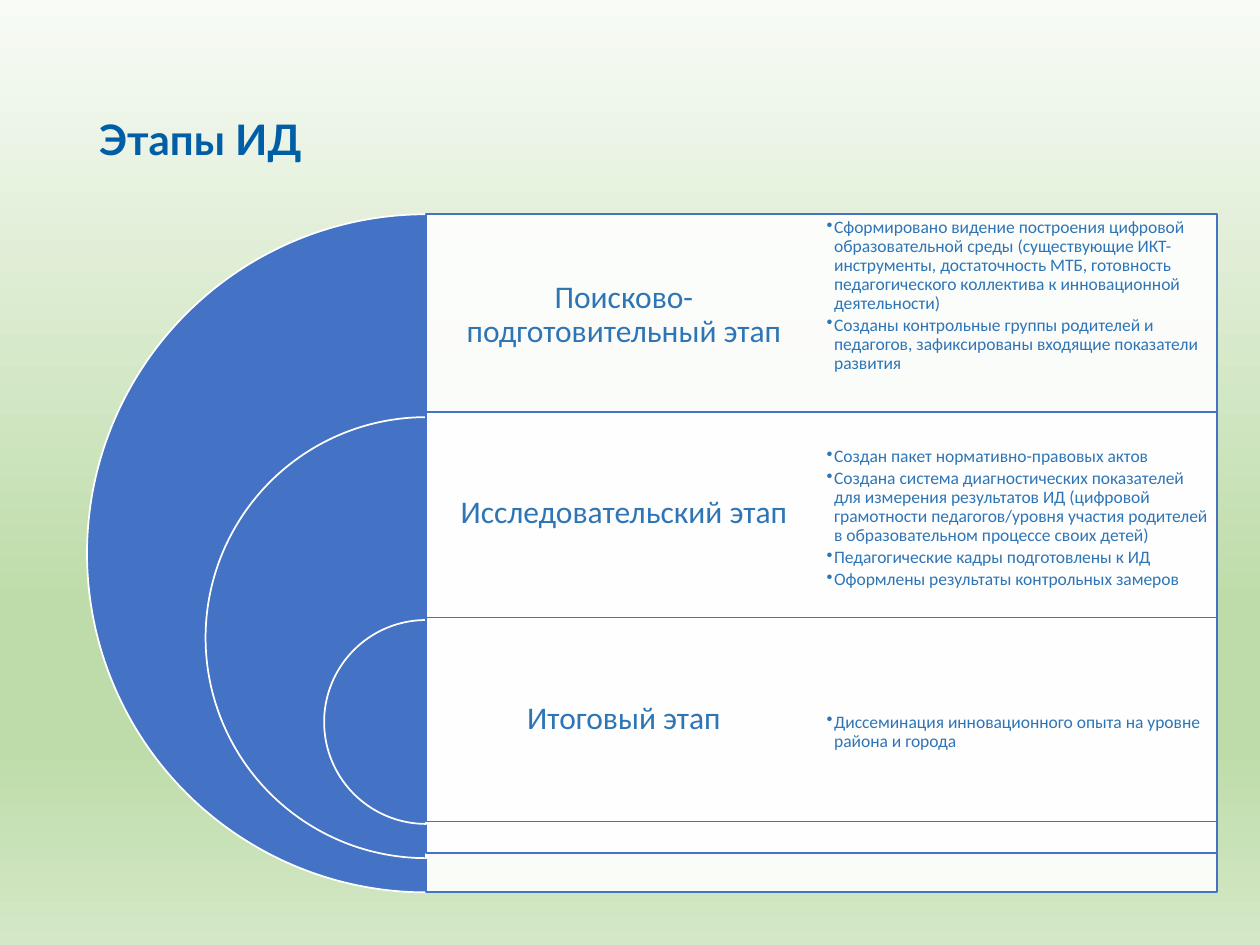
from dataclasses import dataclass

from pptx import Presentation
from pptx.dml.color import RGBColor
from pptx.enum.shapes import MSO_SHAPE as Preset
from pptx.enum.text import MSO_ANCHOR as Anchor, PP_ALIGN as Align
from pptx.oxml.ns import qn
from pptx.oxml.xmlchemy import OxmlElement
from pptx.util import Cm, Pt

COLORS = {
    "title": "005EA6",
    "accent": "4472C4",
    "text": "2E75B6",
    "white": "FFFFFF",
}
BACKGROUND_STOPS = [(0, "F8FBF6"), (64, "BEDCAA"), (79, "BEDCAA"), (100, "D4E8C6")]

# Geometry in centimetres
TOP, ROW_HEIGHT = 4.32, 4.09
CENTER_X, PANEL_WIDTH = 8.59, 15.95
COLUMN_WIDTH = PANEL_WIDTH / 2
OUTER_DIAMETER, DIAMETER_STEP = 13.67, 4.78
TITLE_INSET, BULLET_INSET, BULLET_INDENT = 0.18, 0.1, 0.15


@dataclass
class Stage:
    name: str
    results: list[str]
    panel_top: float
    top_inset: float = BULLET_INSET
    bottom_inset: float = BULLET_INSET


STAGES = [
    Stage("Поисково-подготовительный этап", [
        "Сформировано видение построения цифровой образовательной среды "
        "(существующие ИКТ-инструменты, достаточность МТБ, готовность "
        "педагогического коллектива к инновационной деятельности)",
        "Созданы контрольные группы родителей и педагогов, зафиксированы "
        "входящие показатели развития",
    ], 4.32, bottom_inset=0.9),
    Stage("Исследовательский этап", [
        "Создан пакет нормативно-правовых актов",
        "Создана система диагностических показателей для измерения результатов "
        "ИД (цифровой грамотности педагогов/уровня участия родителей в "
        "образовательном процессе своих детей)",
        "Педагогические кадры подготовлены к ИД",
        "Оформлены результаты контрольных замеров",
    ], 8.31),
    Stage("Итоговый этап", [
        "Диссеминация инновационного опыта на уровне района и города",
    ], 12.45, top_inset=0.53),
]


def set_background(slide) -> None:
    """Vertical gradient with four stops."""
    fill = slide.background.fill
    fill.gradient()
    fill.gradient_angle = 270
    stops = slide.element.find(".//" + qn("a:gsLst"))
    stops.clear()
    for percent, color in BACKGROUND_STOPS:
        stop = OxmlElement("a:gs")
        stop.set("pos", str(percent * 1000))
        value = OxmlElement("a:srgbClr")
        value.set("val", color)
        stop.append(value)
        stops.append(stop)


def add_filled(slide, preset, left: float, top: float, width: float,
               height: float, fill: str, line: str):
    shape = slide.shapes.add_shape(preset, Cm(left), Cm(top), Cm(width), Cm(height))
    shape.shadow.inherit = False
    shape.fill.solid()
    shape.fill.fore_color.rgb = RGBColor.from_string(COLORS[fill])
    shape.line.color.rgb = RGBColor.from_string(COLORS[line])
    shape.line.width = Pt(1)
    return shape


def add_half_disc(slide, index: int) -> None:
    diameter = OUTER_DIAMETER - index * DIAMETER_STEP
    disc = add_filled(slide, Preset.PIE, CENTER_X - diameter / 2,
                      TOP + index * ROW_HEIGHT, diameter, diameter,
                      "accent", "white")
    disc.adjustments[0] = 54
    disc.adjustments[1] = 162


def add_panel(slide, index: int, top: float) -> None:
    panel = add_filled(slide, Preset.RECTANGLE, CENTER_X, top, PANEL_WIDTH,
                       OUTER_DIAMETER - index * DIAMETER_STEP, "white", "accent")
    alpha = OxmlElement("a:alpha")
    alpha.set("val", "90000")
    panel.element.spPr.find(qn("a:solidFill"))[0].append(alpha)


def add_text(slide, left: float, top: float, width: float, height: float,
             lines: list[str], size: int, color: str = "text",
             font: str = "Calibri", bold: bool = False,
             insets: tuple = (0.25, 0.13, 0.25, 0.13)):
    """Middle-anchored text; insets are left, top, right, bottom."""
    box = slide.shapes.add_textbox(Cm(left), Cm(top), Cm(width), Cm(height))
    frame = box.text_frame
    frame.word_wrap = True
    frame.vertical_anchor = Anchor.MIDDLE
    (frame.margin_left, frame.margin_top,
     frame.margin_right, frame.margin_bottom) = map(Cm, insets)
    frame.text = "\n".join(lines)
    for paragraph in frame.paragraphs:
        paragraph.line_spacing = 0.9
        for run in paragraph.runs:
            run.font.size = Pt(size)
            run.font.name = font
            run.font.bold = bold
            run.font.color.rgb = RGBColor.from_string(COLORS[color])
    return frame


def add_results(slide, index: int, stage: Stage) -> None:
    frame = add_text(slide, CENTER_X + COLUMN_WIDTH, TOP + index * ROW_HEIGHT,
                     COLUMN_WIDTH, ROW_HEIGHT, stage.results, 10,
                     insets=(BULLET_INSET, stage.top_inset,
                             BULLET_INSET, stage.bottom_inset))
    for paragraph in frame.paragraphs:
        paragraph.space_after = Pt(1.8)
        properties = paragraph._p.get_or_add_pPr()
        properties.set("marL", str(Cm(BULLET_INDENT)))
        properties.set("indent", str(-Cm(BULLET_INDENT)))
        bullet = OxmlElement("a:buChar")
        bullet.set("char", "•")
        properties.append(bullet)


def main() -> None:
    presentation = Presentation()
    presentation.slide_width, presentation.slide_height = Cm(25.4), Cm(19.05)
    slide = presentation.slides.add_slide(presentation.slide_layouts[6])
    set_background(slide)

    # Heading
    add_text(slide, 1.75, 1.02, 21.89, 3.68, ["Этапы ИД"], 24, "title", "Lato", True)

    # Nested half discs, each with its panel and stage name
    for index, stage in enumerate(STAGES):
        add_half_disc(slide, index)
        add_panel(slide, index, stage.panel_top)
        name = add_text(slide, CENTER_X, stage.panel_top, COLUMN_WIDTH, ROW_HEIGHT,
                        [stage.name], 18, insets=(TITLE_INSET,) * 4)
        name.paragraphs[0].alignment = Align.CENTER

    # Results of each stage
    for index, stage in enumerate(STAGES):
        add_results(slide, index, stage)

    presentation.save("out.pptx")


if __name__ == "__main__":
    main()
